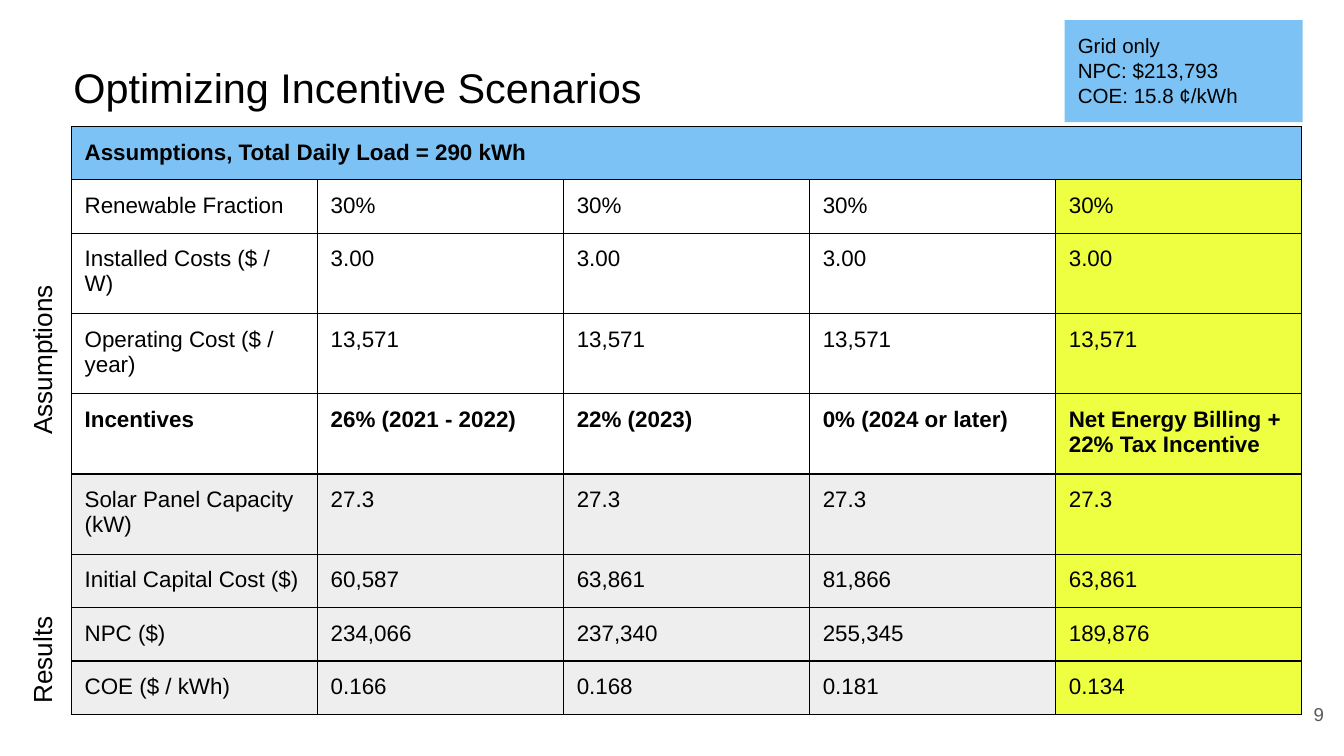
from lxml import etree
from pptx import Presentation
from pptx.dml.color import RGBColor
from pptx.enum.shapes import MSO_SHAPE
from pptx.enum.text import MSO_ANCHOR, PP_ALIGN
from pptx.oxml.ns import qn
from pptx.util import Cm, Pt

RECT = MSO_SHAPE.RECTANGLE
TOP, MID = MSO_ANCHOR.TOP, MSO_ANCHOR.MIDDLE
LEFT, RIGHT = PP_ALIGN.LEFT, PP_ALIGN.RIGHT

BLACK = RGBColor(0x00, 0x00, 0x00)
BLUE = RGBColor(0x7C, 0xC2, 0xF5)
LIME = RGBColor(0xEE, 0xFF, 0x41)
PALE = RGBColor(0xEE, 0xEE, 0xEE)
GRAY = RGBColor(0x59, 0x59, 0x59)

INSET = Cm(0.25)
PADS = dict.fromkeys(
    ("margin_left", "margin_top", "margin_right", "margin_bottom"), INSET
)
COLS = 5
COL = Cm(4.65)
LOW, HIGH = Cm(0.98), Cm(1.46)
TALL = (2, 3, 4, 5)
BOLD = (0, 4)
FIRST = 5

ROWS = [
    ["Assumptions, Total Daily Load = 290 kWh"],
    ["Renewable Fraction"] + ["30%"] * 4,
    ["Installed Costs ($ / W)"] + ["3.00"] * 4,
    ["Operating Cost ($ / year)"] + ["13,571"] * 4,
    ["Incentives", "26% (2021 - 2022)", "22% (2023)", "0% (2024 or later)",
     "Net Energy Billing + 22% Tax Incentive"],
    ["Solar Panel Capacity (kW)"] + ["27.3"] * 4,
    ["Initial Capital Cost ($)", "60,587", "63,861", "81,866", "63,861"],
    ["NPC ($)", "234,066", "237,340", "255,345", "189,876"],
    ["COE ($ / kWh)", "0.166", "0.168", "0.181", "0.134"],
]


def apply(item, form):
    for name, value in form.items():
        setattr(item, name, value)


def write(frame, text, size, color=BLACK, bold=False, align=LEFT):
    frame.text = text
    for para in frame.paragraphs:
        para.alignment = align
        apply(para.font, {"name": "Arial", "size": Pt(size), "bold": bold})
        para.font.color.rgb = color


def add_label(slide, text, box, size, turn=0, anchor=TOP, **look):
    label = slide.shapes.add_textbox(*map(Cm, box))
    label.rotation = turn
    frame = label.text_frame
    apply(frame, {**PADS, "word_wrap": True, "vertical_anchor": anchor})
    write(frame, text, size, **look)


def add_card(slide, text, box):
    card = slide.shapes.add_shape(RECT, *map(Cm, box))
    card.shadow.inherit = False
    card.fill.solid()
    card.fill.fore_color.rgb = BLUE
    card.line.fill.background()
    frame = card.text_frame
    apply(frame, {**PADS, "word_wrap": True, "vertical_anchor": TOP})
    write(frame, text, 11)


def add_edges(cell):
    props = cell._tc.get_or_add_tcPr()
    for spot, side in enumerate(("lnL", "lnR", "lnT", "lnB")):
        line = etree.Element(qn(f"a:{side}"), w=str(Pt(0.75)))
        fill = etree.SubElement(line, qn("a:solidFill"))
        etree.SubElement(fill, qn("a:srgbClr"), val=str(BLACK))
        props.insert(spot, line)


def pick_fill(row, col):
    if row == 0:
        return BLUE
    if col == COLS - 1:
        return LIME
    return PALE if row >= FIRST else None


def style_cell(cell, row, col):
    apply(cell, {**PADS, "vertical_anchor": TOP})
    color = pick_fill(row, col)
    if color is None:
        cell.fill.background()
    else:
        cell.fill.solid()
        cell.fill.fore_color.rgb = color
    add_edges(cell)


def add_grid(slide):
    highs = [HIGH if row in TALL else LOW for row in range(len(ROWS))]
    table = slide.shapes.add_table(
        len(ROWS), COLS, Cm(1.35), Cm(2.39), COL * COLS, sum(highs)
    ).table
    apply(table, {"first_row": False, "horz_banding": False})
    for col in table.columns:
        col.width = COL
    for row, high in enumerate(highs):
        table.rows[row].height = high
        for col in range(COLS):
            style_cell(table.cell(row, col), row, col)
        for col, text in enumerate(ROWS[row]):
            write(table.cell(row, col).text_frame, text, 12, bold=row in BOLD)
    table.cell(0, 0).merge(table.cell(0, COLS - 1))


def main():
    deck = Presentation()
    apply(deck, {"slide_width": Cm(25.4), "slide_height": Cm(14.29)})
    slide = deck.slides.add_slide(deck.slide_layouts[6])
    add_label(slide, "Optimizing Incentive Scenarios",
              (1.14, 0.84, 15.49, 1.6), 22.2, anchor=MID)
    add_grid(slide)
    add_card(slide, "Grid only\nNPC: $213,793\nCOE: 15.8 ¢/kWh",
             (20.12, 0.38, 4.5, 1.93))
    for text, top in (("Results", 10.36), ("Assumptions", 5.28)):
        add_label(slide, text, (-1.83, top, 5.26, 1.12), 14, turn=270)
    add_label(slide, "9", (23.75, 12.95, 1.52, 1.09), 10,
              anchor=MID, color=GRAY, align=RIGHT)
    deck.save("out.pptx")


if __name__ == "__main__":
    main()
